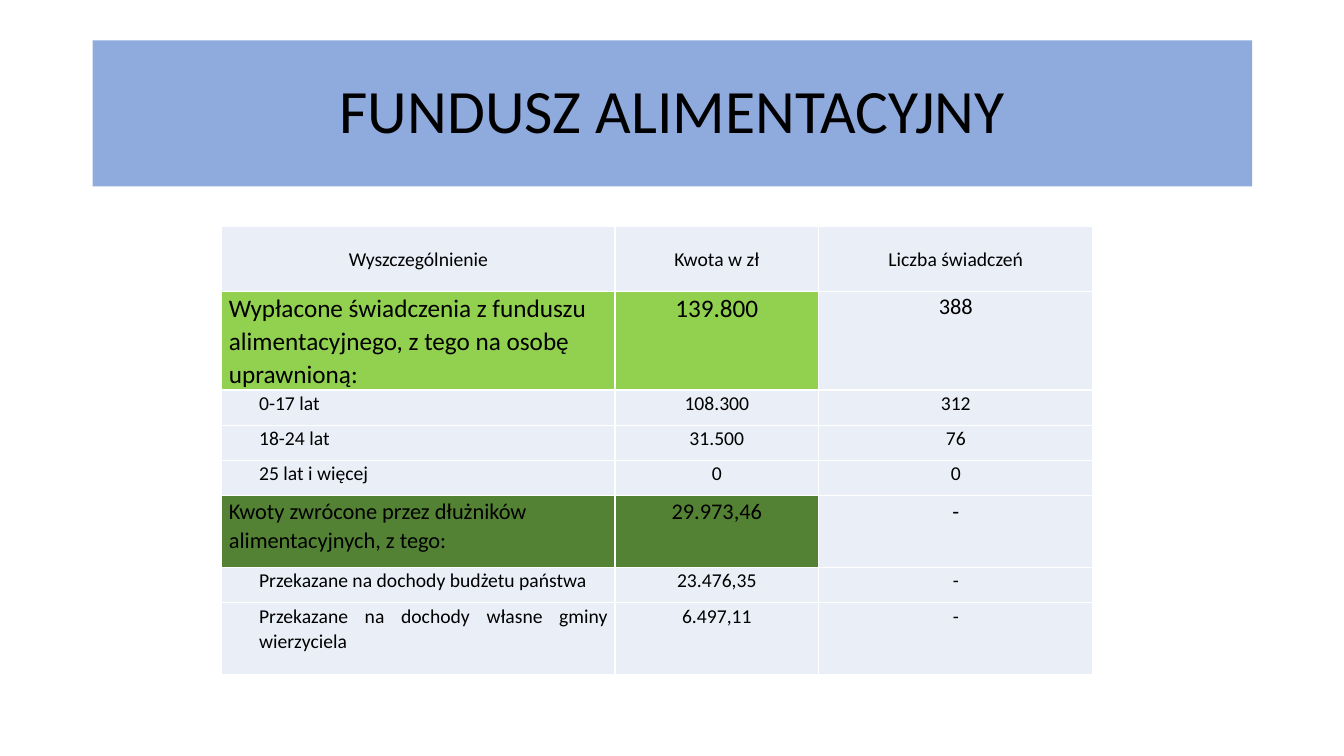
from lxml.etree import SubElement
from pptx import Presentation
from pptx.dml.color import RGBColor
from pptx.enum.shapes import MSO_SHAPE as Shape
from pptx.enum.text import MSO_ANCHOR as Anchor, PP_ALIGN as Align
from pptx.oxml.ns import qn
from pptx.util import Pt

EMU_PER_PX = 9144
COLORS = {
    "banner": "8FAADC",
    "plain": "EAEFF7",
    "paid": "92D050",
    "returned": "548235",
    "border": "FFFFFF",
    "text": "000000",
}
COLUMN_WIDTHS = [390, 202, 272]
LEFT, CENTER, JUSTIFY = Align.LEFT, Align.CENTER, Align.JUSTIFY

HEADER = (64, ["Wyszczególnienie", "Kwota w zł", "Liczba świadczeń"])
ROWS = [
    (97, ["Wypłacone świadczenia z funduszu alimentacyjnego, z tego na osobę uprawnioną:",
          "139.800", "388"], "paid", [18, 18, 16], LEFT),
    (35, ["0-17 lat", "108.300", "312"], "plain", [14] * 3, LEFT),
    (35, ["18-24 lat", "31.500", "76"], "plain", [14] * 3, LEFT),
    (35, ["25 lat i więcej", "0", "0"], "plain", [14] * 3, LEFT),
    (71, ["Kwoty zwrócone przez dłużników alimentacyjnych, z tego:",
          "29.973,46", "-"], "returned", [16] * 3, LEFT),
    (35, ["Przekazane na dochody budżetu państwa", "23.476,35", "-"], "plain", [14] * 3, LEFT),
    (71, ["Przekazane na dochody własne gminy wierzyciela", "6.497,11", "-"],
     "plain", [14] * 3, JUSTIFY),
]


def px(length):
    return length * EMU_PER_PX


class SlideBuilder:
    """Draws styled elements on the current slide."""

    def __init__(self, page, font="Calibri"):
        self.page = page
        self.font = font

    def color(self, name):
        return RGBColor.from_string(COLORS[name])

    def add_text(self, frame, text, size, align, spacing, indent=0):
        para = frame.paragraphs[0]
        para.alignment = align
        para.line_spacing = spacing
        if indent:
            properties = para._p.get_or_add_pPr()
            properties.set("marL", str(px(indent)))
            properties.set("indent", "0")
        span = para.add_run()
        span.text = text
        span.font.name = self.font
        span.font.size = Pt(size)
        span.font.color.rgb = self.color("text")

    def banner(self, left, top, width, height, text):
        box = self.page.shapes.add_shape(
            Shape.RECTANGLE, px(left), px(top), px(width), px(height))
        box.shadow.inherit = False
        box.fill.solid()
        box.fill.fore_color.rgb = self.color("banner")
        box.line.fill.background()
        box.text_frame.word_wrap = True
        box.text_frame.vertical_anchor = Anchor.MIDDLE
        self.add_text(box.text_frame, text, 44, CENTER, 0.9)

    def table(self, left, top, widths, heights):
        table = self.page.shapes.add_table(
            len(heights), len(widths), px(left), px(top),
            px(sum(widths)), px(sum(heights))).table
        table.first_row = False
        table.horz_banding = False
        for column, width in zip(table.columns, widths):
            column.width = px(width)
        for row, height in zip(table.rows, heights):
            row.height = px(height)
        return table

    def border(self, cell):
        properties = cell._tc.get_or_add_tcPr()
        for side in ("lnL", "lnR", "lnT", "lnB"):
            line = SubElement(properties, qn(f"a:{side}"), w=str(Pt(1)))
            fill = SubElement(line, qn("a:solidFill"))
            SubElement(fill, qn("a:srgbClr"), val=COLORS["border"])

    def cell(self, cell, text, fill, size, align, anchor=Anchor.TOP, indent=0):
        self.border(cell)
        cell.fill.solid()
        cell.fill.fore_color.rgb = self.color(fill)
        cell.margin_left = cell.margin_right = px(7)
        cell.margin_top = cell.margin_bottom = 0
        cell.vertical_anchor = anchor
        self.add_text(cell.text_frame, text, size, align, 1.07, indent)


def main():
    deck = Presentation()
    deck.slide_width, deck.slide_height = px(1333), px(750)
    builder = SlideBuilder(deck.slides.add_slide(deck.slide_layouts[6]))
    builder.banner(92, 40, 1150, 145, "FUNDUSZ ALIMENTACYJNY")

    header_height, titles = HEADER
    heights = [header_height] + [row[0] for row in ROWS]
    table = builder.table(220, 225, COLUMN_WIDTHS, heights)
    for column, title in enumerate(titles):
        builder.cell(table.cell(0, column), title, "plain", 14, CENTER, Anchor.MIDDLE)
    for index, (_, texts, kind, sizes, label_align) in enumerate(ROWS, 1):
        for column, (text, size) in enumerate(zip(texts, sizes)):
            is_label = column == 0
            builder.cell(
                table.cell(index, column), text,
                fill="plain" if column == 2 else kind,
                size=size,
                align=label_align if is_label else CENTER,
                indent=30 if is_label and kind == "plain" else 0)
    deck.save("out.pptx")


if __name__ == "__main__":
    main()
